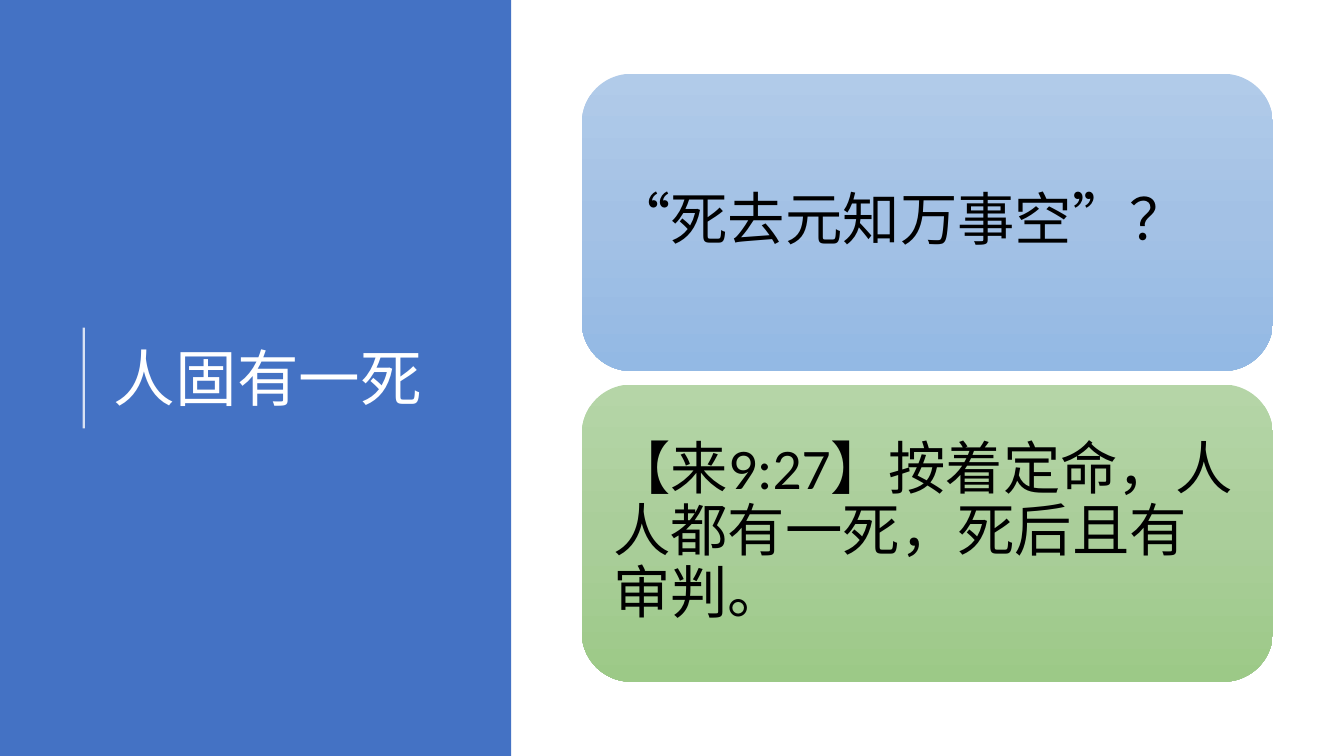
import copy

import pptx
import pptx.dml.color
import pptx.enum.lang
import pptx.enum.shapes
import pptx.enum.text
import pptx.oxml
import pptx.oxml.ns
import pptx.util

Cm = pptx.util.Cm
Pt = pptx.util.Pt
KINDS = pptx.enum.shapes.MSO_SHAPE
CARDS = [
    ("“死去元知万事空”？", ("B1CBE9", "A3C1E5", "93B9E4")),
    ("【来9:27】按着定命，人人都有一死，死后且有审判。", ("B5D5A7", "AACE9A", "9CC987")),
]


def paint(code):
    return pptx.dml.color.RGBColor.from_string(code)


def apply(target, values):
    for name, value in values.items():
        setattr(target, name, value)


def write(frame, text, size, color, inset):
    sides = ("left", "top", "right", "bottom")
    apply(frame, {f"margin_{side}": Cm(gap) for side, gap in zip(sides, inset)})
    apply(frame, {
        "word_wrap": True,
        "auto_size": pptx.enum.text.MSO_AUTO_SIZE.NONE,
        "vertical_anchor": pptx.enum.text.MSO_ANCHOR.MIDDLE,
    })
    line = frame.paragraphs[0]
    apply(line, {"alignment": pptx.enum.text.PP_ALIGN.LEFT, "line_spacing": 0.9})
    run = line.add_run()
    run.text = text
    apply(run.font, {
        "name": "Calibri",
        "size": Pt(size),
        "language_id": pptx.enum.lang.MSO_LANGUAGE_ID.SIMPLIFIED_CHINESE,
    })
    run.font.color.rgb = paint(color)


def add_block(slide, kind, box):
    block = slide.shapes.add_shape(kind, *map(Cm, box))
    block.shadow.inherit = False
    block.line.fill.background()
    return block


def add_rule(slide, x, top, end):
    rule = slide.shapes.add_connector(
        pptx.enum.shapes.MSO_CONNECTOR.STRAIGHT, Cm(x), Cm(end), Cm(x), Cm(top))
    rule.line.width = Pt(1.5)
    rule.line.color.rgb = paint("FFFFFF")
    props = rule._element.spPr
    shade = props.find(".//" + pptx.oxml.ns.qn("a:srgbClr"))
    space = pptx.oxml.ns.nsdecls("a")
    shade.append(pptx.oxml.parse_xml(f'<a:alpha {space} val="80000"/>'))
    props.append(pptx.oxml.parse_xml(f"<a:effectLst {space}/>"))


def add_panel(slide, box):
    left, top, width, height = box
    panel = add_block(slide, KINDS.RECTANGLE, box)
    panel.fill.solid()
    panel.fill.fore_color.rgb = paint("4472C4")
    title = slide.shapes.title
    apply(title, {
        "left": Cm(left + 2.62),
        "top": Cm(top + 1.98),
        "width": Cm(width - 3.51),
        "height": Cm(height - 3.76),
    })
    write(title.text_frame, "人固有一死", 44, "FFFFFF", (0.25, 0.13, 0.25, 0.13))
    slide.shapes._spTree.append(title._element)
    mid = top + height / 2
    add_rule(slide, left + 2.11, mid - 1.27, mid + 1.27)


def blend(shape, codes):
    shape.fill.gradient()
    shape.fill.gradient_angle = 270
    stops = shape._element.spPr.find(".//" + pptx.oxml.ns.qn("a:gsLst"))
    stops.append(copy.deepcopy(stops[-1]))
    last = len(codes) - 1
    for i, (stop, code) in enumerate(zip(shape.fill.gradient_stops, codes)):
        stop.position = i / last
        stop.color.rgb = paint(code)


def add_cards(slide, box, gap):
    left, top, width, height = box
    step = (height + gap) / len(CARDS)
    for i, (text, codes) in enumerate(CARDS):
        place = (left, top + i * step, width, step - gap)
        card = add_block(slide, KINDS.ROUNDED_RECTANGLE, place)
        blend(card, codes)
        write(card.text_frame, text, 41, "000000", (0.43,) * 4)


def main():
    deck = pptx.Presentation()
    apply(deck, {"slide_width": Cm(33.87), "slide_height": Cm(19.05)})
    slide = deck.slides.add_slide(deck.slide_layouts[5])
    add_panel(slide, (0, 0, 12.88, 19.05))
    add_cards(slide, (14.66, 1.86, 17.42, 15.32), 0.34)
    deck.save("out.pptx")


if __name__ == "__main__":
    main()
